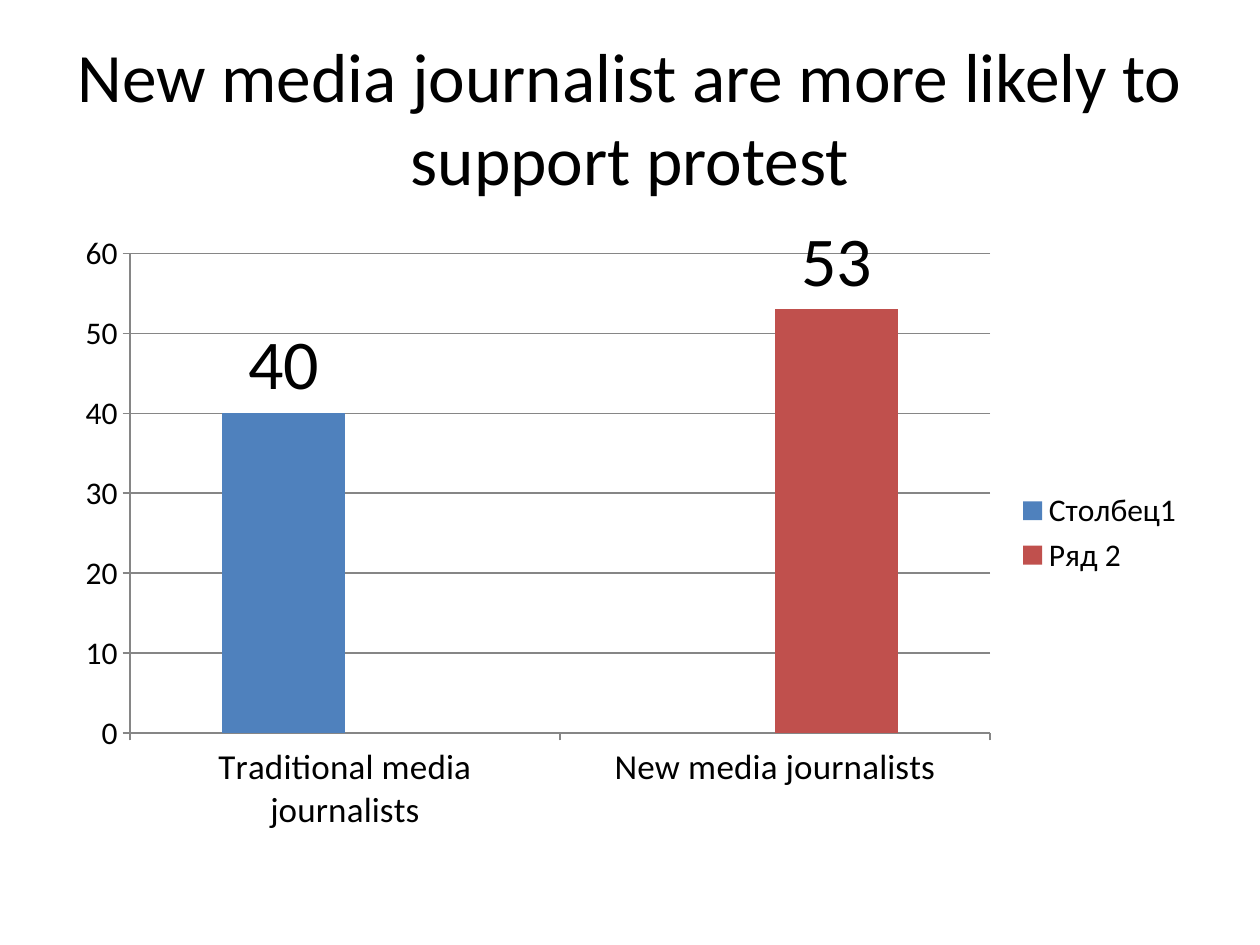
from pptx import Presentation
from pptx.chart.data import CategoryChartData as ChartData
from pptx.dml.color import RGBColor
from pptx.enum.chart import XL_CHART_TYPE as Kind
from pptx.enum.chart import XL_LABEL_POSITION as LabelPos
from pptx.enum.chart import XL_LEGEND_POSITION as LegendPos
from pptx.enum.chart import XL_TICK_MARK as Tick
from pptx.enum.text import MSO_ANCHOR as Anchor
from pptx.enum.text import PP_ALIGN as Align
from pptx.util import Pt

# Content
TITLE = "New media journalist are more likely to support protest"
GROUPS = ["Traditional media journalists", "New media journalists"]
SERIES = [
    ("Столбец1", (40, None), "4F81BD"),
    ("Ряд 2", (None, 53), "C0504D"),
]
FONT, INK, GRID = "Calibri", "000000", "868686"
LEFT, WIDE = 36, 648


def color(code):
    return RGBColor.from_string(code)


def style(font, size):
    font.name, font.size = FONT, Pt(size)
    font.color.rgb = color(INK)


def rule(line):
    line.color.rgb = color(GRID)
    line.width = Pt(0.75)


deck = Presentation()
deck.slide_width, deck.slide_height = Pt(720), Pt(540)
slide = deck.slides.add_slide(deck.slide_layouts[6])

# Title
box = slide.shapes.add_textbox(Pt(LEFT), Pt(21.6), Pt(WIDE), Pt(90))
frame = box.text_frame
frame.word_wrap = True
frame.vertical_anchor = Anchor.MIDDLE
head = frame.paragraphs[0]
head.text, head.alignment = TITLE, Align.CENTER
style(head.font, 39.6)

# Chart
data = ChartData()
data.categories = GROUPS
for name, vals, _ in SERIES:
    data.add_series(name, vals)
chart = slide.shapes.add_chart(
    Kind.COLUMN_CLUSTERED, Pt(LEFT), Pt(126), Pt(WIDE), Pt(356.4), data
).chart
style(chart.font, 18)
chart.has_title = False
chart.has_legend = True
chart.legend.position = LegendPos.RIGHT
chart.legend.include_in_layout = False

# Axes
for axis, size in ((chart.category_axis, 20), (chart.value_axis, 18)):
    axis.major_tick_mark, axis.minor_tick_mark = Tick.OUTSIDE, Tick.NONE
    style(axis.tick_labels.font, size)
    rule(axis.format.line)
chart.value_axis.has_major_gridlines = True
rule(chart.value_axis.major_gridlines.format.line)

# Bars and their values
plot = chart.plots[0]
plot.gap_width, plot.overlap = 150, 0
plot.vary_by_categories = False
for bars, (_, _, fill) in zip(plot.series, SERIES):
    bars.format.fill.solid()
    bars.format.fill.fore_color.rgb = color(fill)
    labels = bars.data_labels
    labels.show_value = True
    labels.position = LabelPos.OUTSIDE_END
    style(labels.font, 40)

deck.save("out.pptx")
